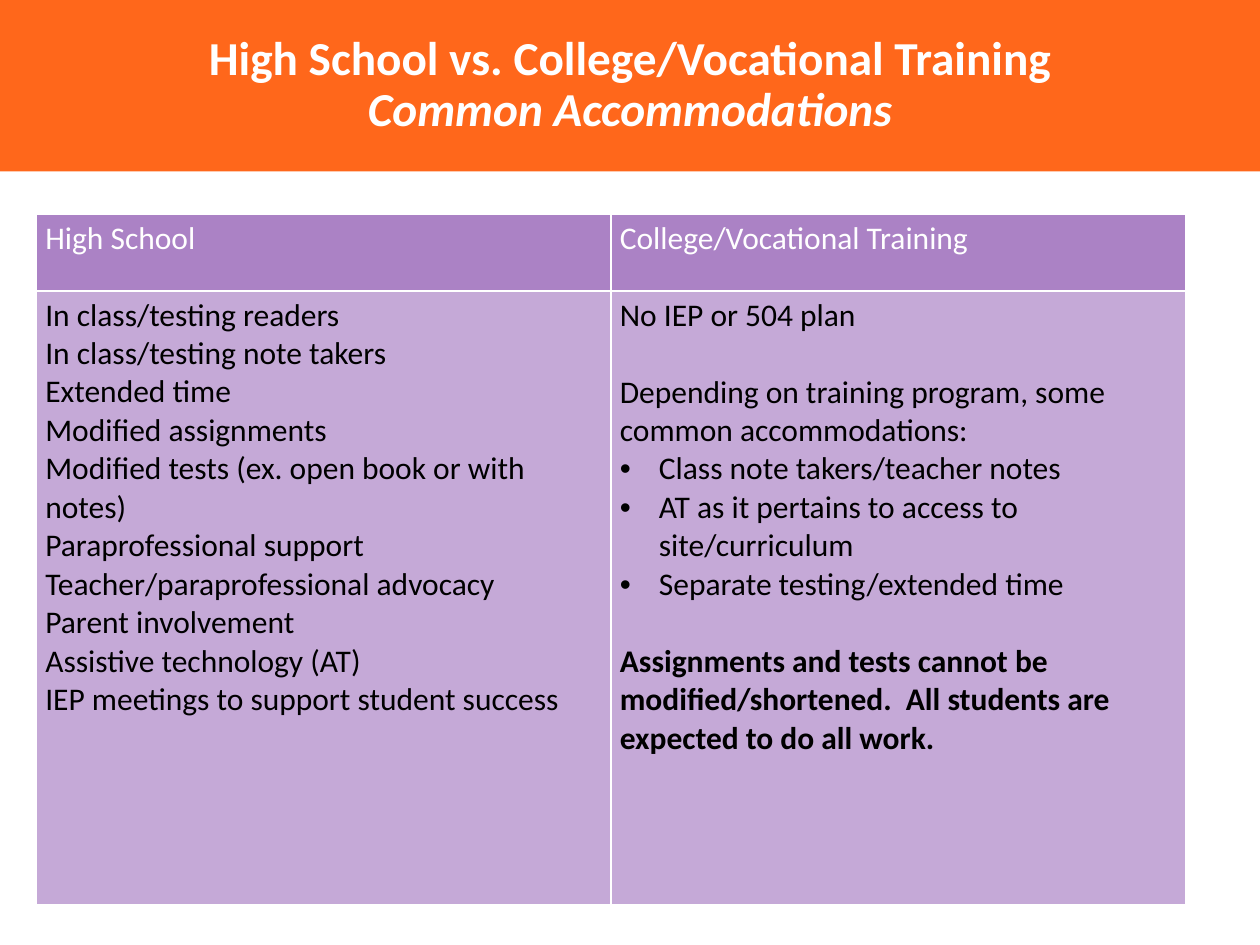
"""Build a slide comparing accommodations in high school and after it."""
from dataclasses import dataclass

from lxml import etree
from pptx import Presentation
from pptx.dml.color import RGBColor
from pptx.enum.text import MSO_ANCHOR, MSO_AUTO_SIZE, PP_ALIGN
from pptx.oxml.ns import qn
from pptx.util import Inches, Pt

CENTER = PP_ALIGN.CENTER
MIDDLE = MSO_ANCHOR.MIDDLE
NO_AUTOFIT = MSO_AUTO_SIZE.NONE
FONT = "Calibri"
COLORS = {
    "banner": "FF671B",
    "header": "AB82C5",
    "body": "C5A9D7",
    "white": "FFFFFF",
    "black": "000000",
}
BODY_SIZE = 18
LINE_GAP = Pt(22)
BULLET_INDENT = Inches(0.31)


@dataclass
class Item:
    """One paragraph of a table cell."""
    text: str
    bold: bool = False
    bullet: bool = False
    gap: bool = False


@dataclass
class Column:
    """One table column with its heading and items."""
    heading: str
    items: list[Item]


COLUMNS = [
    Column("High School", [
        Item("In class/testing readers"),
        Item("In class/testing note takers"),
        Item("Extended time"),
        Item("Modified assignments"),
        Item("Modified tests (ex. open book or with notes)"),
        Item("Paraprofessional support"),
        Item("Teacher/paraprofessional advocacy"),
        Item("Parent involvement"),
        Item("Assistive technology (AT)"),
        Item("IEP meetings to support student success"),
    ]),
    Column("College/Vocational Training", [
        Item("No IEP or 504 plan"),
        Item("Depending on training program, some common accommodations:", gap=True),
        Item("Class note takers/teacher notes", bullet=True),
        Item("AT as it pertains to access to site/curriculum", bullet=True),
        Item("Separate testing/extended time", bullet=True),
        Item("Assignments and tests cannot be modified/shortened.  "
             "All students are expected to do all work.", bold=True, gap=True),
    ]),
]


def rgb(name: str) -> RGBColor:
    """Return the named colour."""
    return RGBColor.from_string(COLORS[name])


def add_run(p, text: str, size: float, color: str, bold: bool = False, italic: bool = False) -> None:
    """Add a formatted run to a paragraph."""
    r = p.add_run()
    r.text = text
    r.font.name = FONT
    r.font.size = Pt(size)
    r.font.bold = bold
    r.font.italic = italic
    r.font.color.rgb = rgb(color)


def add_title(s) -> None:
    """Turn the title placeholder into the banner."""
    title = s.shapes.title
    title.left, title.top = 0, 0
    title.width, title.height = Inches(10), Inches(1.36)
    title.fill.solid()
    title.fill.fore_color.rgb = rgb("banner")
    tf = title.text_frame
    tf.auto_size = NO_AUTOFIT
    tf.word_wrap = True
    tf.vertical_anchor = MIDDLE
    p = tf.paragraphs[0]
    p.alignment = CENTER
    p.line_spacing = 0.9
    add_run(p, "High School vs. College/Vocational Training", 27, "white", bold=True)
    p.add_line_break()
    add_run(p, "Common Accommodations", 27, "white", bold=True, italic=True)


def set_borders(cell, color: str) -> None:
    """Draw a one-point line on each side of a cell."""
    tcPr = cell._tc.get_or_add_tcPr()
    for side in ("a:lnL", "a:lnR", "a:lnT", "a:lnB"):
        ln = etree.SubElement(tcPr, qn(side), w=str(Pt(1)))
        fill = etree.SubElement(ln, qn("a:solidFill"))
        etree.SubElement(fill, qn("a:srgbClr"), val=COLORS[color])


def add_bullet(p) -> None:
    """Give a paragraph a hanging bullet."""
    pPr = p._p.get_or_add_pPr()
    pPr.set("marL", str(BULLET_INDENT))
    pPr.set("indent", str(-BULLET_INDENT))
    etree.SubElement(pPr, qn("a:buFont"), typeface="Arial")
    etree.SubElement(pPr, qn("a:buChar"), char="•")


def fill_cell(cell, items: list[Item], fill: str, color: str) -> None:
    """Format a cell and write its items."""
    set_borders(cell, "white")
    cell.fill.solid()
    cell.fill.fore_color.rgb = rgb(fill)
    cell.margin_left = cell.margin_right = Inches(0.07)
    cell.margin_top = cell.margin_bottom = Inches(0.04)
    tf = cell.text_frame
    for i, item in enumerate(items):
        p = tf.add_paragraph() if i else tf.paragraphs[0]
        if item.gap:
            p.space_before = LINE_GAP
        if item.bullet:
            add_bullet(p)
        add_run(p, item.text, BODY_SIZE, color, item.bold)


def add_comparison(s, columns: list[Column]) -> None:
    """Add the comparison table."""
    frame = s.shapes.add_table(2, len(columns), Inches(0.29), Inches(1.7), Inches(9.12), Inches(5.48))
    table = frame.table
    table.first_row = False
    table.horz_banding = False
    table.rows[0].height = Inches(0.61)
    table.rows[1].height = Inches(4.87)
    for i, column in enumerate(columns):
        fill_cell(table.cell(0, i), [Item(column.heading)], "header", "white")
        fill_cell(table.cell(1, i), column.items, "body", "black")


def main() -> None:
    """Build and save the slide."""
    prs = Presentation()
    prs.slide_width, prs.slide_height = Inches(10), Inches(7.5)
    s = prs.slides.add_slide(prs.slide_layouts[5])
    add_title(s)
    add_comparison(s, COLUMNS)
    prs.save("out.pptx")


if __name__ == "__main__":
    main()
